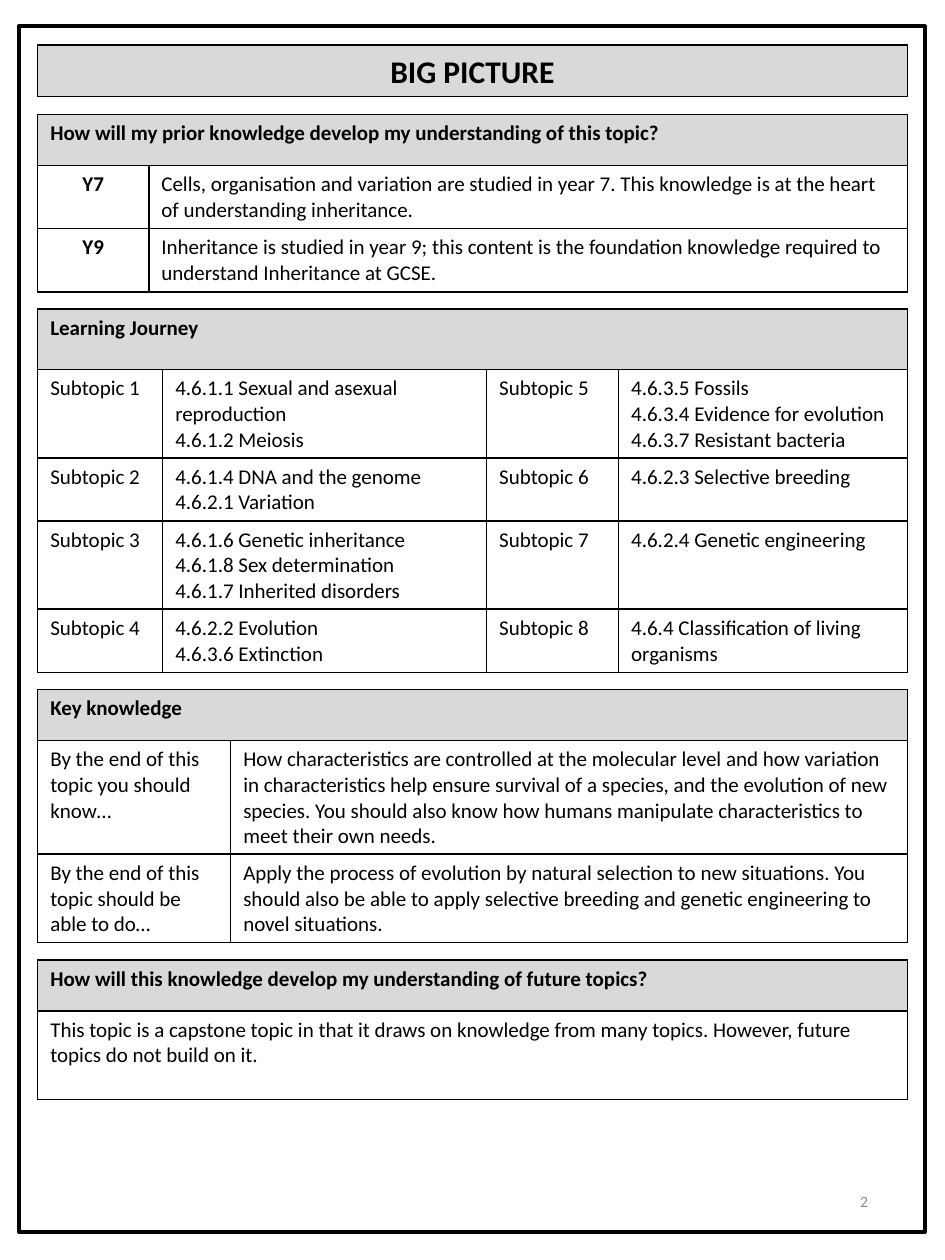
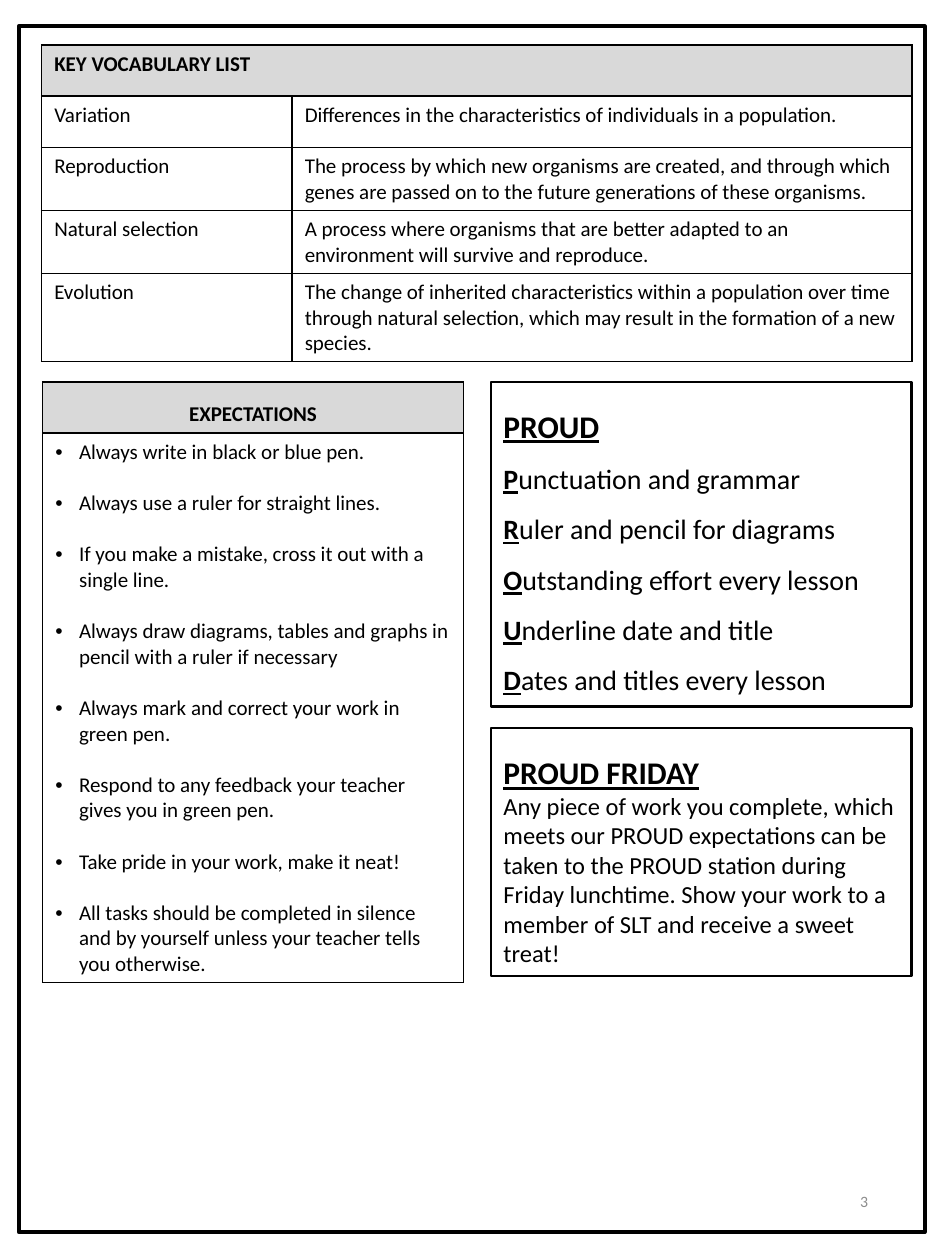
from dataclasses import dataclass

from lxml.etree import SubElement
from pptx import Presentation
from pptx.dml.color import RGBColor
from pptx.enum.shapes import MSO_SHAPE as Shape
from pptx.enum.text import MSO_ANCHOR as Anchor, MSO_AUTO_SIZE as AutoSize, PP_ALIGN as Align
from pptx.oxml.ns import qn
from pptx.util import Cm, Pt


@dataclass(frozen=True)
class Theme:
    font: str = "Calibri"
    ink: RGBColor = RGBColor(0x00, 0x00, 0x00)
    paper: RGBColor = RGBColor(0xFF, 0xFF, 0xFF)
    band: RGBColor = RGBColor(0xD9, 0xD9, 0xD9)
    muted: RGBColor = RGBColor(0x8C, 0x8C, 0x8C)
    heading: int = 18
    proud: int = 16
    friday: int = 14
    body: int = 12
    number: int = 9


theme = Theme()

# Table row heights in centimetres, by lines of text
HEADING, TWO, THREE, FOUR = 1.03, 1.27, 1.78, 2.29


def add_run(paragraph, text, size=theme.body, bold=False, underline=False, color=theme.ink):
    run = paragraph.add_run()
    run.text = text
    font = run.font
    font.name, font.size, font.bold, font.underline = theme.font, Pt(size), bold, underline
    font.color.rgb = color


def add_table(slide, left, top, widths, heights, rows, bold_labels=False):
    """Bordered table whose first row is a shaded heading across all columns."""
    frame = slide.shapes.add_table(len(rows), len(widths), Cm(left), Cm(top),
                                   Cm(sum(widths)), Cm(sum(heights)))
    table = frame.table
    table.first_row = table.horz_banding = False
    for column, width in zip(table.columns, widths):
        column.width = Cm(width)
    for row, height in zip(table.rows, heights):
        row.height = Cm(height)
    for cell in table.iter_cells():
        properties = cell._tc.get_or_add_tcPr()
        for side in ("a:lnL", "a:lnR", "a:lnT", "a:lnB"):
            border = SubElement(properties, qn(side), w=str(Pt(1)))
            fill = SubElement(border, qn("a:solidFill"))
            SubElement(fill, qn("a:srgbClr"), val=str(theme.ink))
        cell.fill.solid()
        cell.fill.fore_color.rgb = theme.paper
    if len(widths) > 1:
        table.cell(0, 0).merge(table.cell(0, len(widths) - 1))
    table.cell(0, 0).fill.fore_color.rgb = theme.band
    for row_index, row in enumerate(rows):
        for column_index, text in enumerate(row):
            text_frame = table.cell(row_index, column_index).text_frame
            label = bold_labels and row_index > 0 and column_index == 0
            for line_index, line in enumerate(text.split("\n")):
                paragraph = text_frame.add_paragraph() if line_index else text_frame.paragraphs[0]
                if label:
                    paragraph.alignment = Align.CENTER
                add_run(paragraph, line, bold=row_index == 0 or label)
    return table


presentation = Presentation()
presentation.slide_width, presentation.slide_height = Cm(19.05), Cm(25.4)
picture_slide = presentation.slides.add_slide(presentation.slide_layouts[5])
vocabulary_slide = presentation.slides.add_slide(presentation.slide_layouts[6])

# Page frame and page number on both slides
for number, slide in enumerate((picture_slide, vocabulary_slide), start=2):
    page_frame = slide.shapes.add_shape(Shape.RECTANGLE, Cm(0.38), Cm(0.53), Cm(18.26), Cm(24.31))
    page_frame.shadow.inherit = False
    page_frame.fill.background()
    page_frame.line.color.rgb = theme.ink
    page_frame.line.width = Pt(2.25)
    number_box = slide.shapes.add_textbox(Cm(13.46), Cm(23.55), Cm(4.29), Cm(1.35))
    number_box.text_frame.word_wrap = True
    number_box.text_frame.vertical_anchor = Anchor.MIDDLE
    paragraph = number_box.text_frame.paragraphs[0]
    paragraph.alignment = Align.RIGHT
    add_run(paragraph, str(number), theme.number, color=theme.muted)

# Slide title
title = picture_slide.shapes.title
title.left, title.top, title.width, title.height = Cm(0.76), Cm(0.91), Cm(17.53), Cm(1.03)
title.fill.solid()
title.fill.fore_color.rgb = theme.band
title.line.color.rgb = theme.ink
title.line.width = Pt(0.75)
title.text_frame.auto_size = AutoSize.NONE
title.text_frame.vertical_anchor = Anchor.MIDDLE
title.text_frame.paragraphs[0].alignment = Align.CENTER
add_run(title.text_frame.paragraphs[0], "BIG PICTURE", theme.heading, bold=True)

# Tables stacked under the title: widths, heights, rows, bold labels
sections = [
    ([2.24, 15.29], [HEADING, TWO, TWO], [
        ["How will my prior knowledge develop my understanding of this topic?"],
        ["Y7", "Cells, organisation and variation are studied in year 7. This knowledge is at "
               "the heart of understanding inheritance."],
        ["Y9", "Inheritance is studied in year 9; this content is the foundation knowledge "
               "required to understand Inheritance at GCSE."],
    ], True),
    ([2.52, 6.53, 2.66, 5.82], [1.22, THREE, TWO, THREE, TWO], [
        ["Learning Journey"],
        ["Subtopic 1", "4.6.1.1 Sexual and asexual reproduction\n4.6.1.2 Meiosis",
         "Subtopic 5",
         "4.6.3.5 Fossils\n4.6.3.4 Evidence for evolution\n4.6.3.7 Resistant bacteria"],
        ["Subtopic 2", "4.6.1.4 DNA and the genome\n4.6.2.1 Variation",
         "Subtopic 6", "4.6.2.3 Selective breeding"],
        ["Subtopic 3",
         "4.6.1.6 Genetic inheritance\n4.6.1.8 Sex determination\n4.6.1.7 Inherited disorders",
         "Subtopic 7", "4.6.2.4 Genetic engineering"],
        ["Subtopic 4", "4.6.2.2 Evolution\n4.6.3.6 Extinction",
         "Subtopic 8", "4.6.4 Classification of living organisms"],
    ], False),
    ([3.89, 13.64], [HEADING, FOUR, THREE], [
        ["Key knowledge"],
        ["By the end of this topic you should know…",
         "How characteristics are controlled at the molecular level and how variation in "
         "characteristics help ensure survival of a species, and the evolution of new species. "
         "You should also know how humans manipulate characteristics to meet their own needs."],
        ["By the end of this topic should be able to do…",
         "Apply the process of evolution by natural selection to new situations. You should also "
         "be able to apply selective breeding and genetic engineering to novel situations."],
    ], False),
    ([17.53], [HEADING, THREE], [
        ["How will this knowledge develop my understanding of future topics?"],
        ["This topic is a capstone topic in that it draws on knowledge from many topics. "
         "However, future topics do not build on it."],
    ], False),
]
top = 2.31
for widths, heights, rows, bold_labels in sections:
    add_table(picture_slide, 0.76, top, widths, heights, rows, bold_labels)
    top += sum(heights) + 0.35

# Vocabulary table
add_table(vocabulary_slide, 0.84, 0.91, [5.05, 12.49], [HEADING, HEADING, TWO, TWO, THREE], [
    ["KEY VOCABULARY LIST"],
    ["Variation", "Differences in the characteristics of individuals in a population."],
    ["Reproduction", "The process by which new organisms are created, and through which genes "
                     "are passed on to the future generations of these organisms."],
    ["Natural selection", "A process where organisms that are better adapted to an environment "
                          "will survive and reproduce."],
    ["Evolution", "The change of inherited characteristics within a population over time through "
                  "natural selection, which may result in the formation of a new species."],
])

# Expectations, as a bulleted list in a table
expectations = [
    "Always write in black or blue pen.",
    "Always use a ruler for straight lines.",
    "If you make a mistake, cross it out with a single line.",
    "Always draw diagrams, tables and graphs in pencil with a ruler if necessary",
    "Always mark and correct your work in green pen.",
    "Respond to any feedback your teacher gives you in green pen.",
    "Take pride in your work, make it neat!",
    "All tasks should be completed in silence and by yourself unless your teacher tells you "
    "otherwise.",
]
table = add_table(vocabulary_slide, 0.86, 7.7, [8.48], [HEADING, 11.08],
                  [["EXPECTATIONS"], ["\n".join(expectations)]])
heading = table.cell(0, 0).text_frame.paragraphs[0]
heading.alignment = Align.CENTER
heading.line_spacing = 1.5
for index, paragraph in enumerate(table.cell(1, 0).text_frame.paragraphs):
    if index:
        paragraph.space_before = Pt(14.65)
    properties = paragraph._p.get_or_add_pPr()
    properties.set("marL", str(Cm(0.48)))
    properties.set("indent", str(-Cm(0.48)))
    SubElement(properties, qn("a:buFont"), typeface="Arial")
    SubElement(properties, qn("a:buChar"), char="•")

# PROUD boxes: top, height, heading
proud_frames = []
for top, height, name in ((7.7, 6.55, "PROUD"), (14.68, 5.0, "PROUD FRIDAY")):
    box = vocabulary_slide.shapes.add_shape(Shape.RECTANGLE, Cm(9.9), Cm(top), Cm(8.48), Cm(height))
    box.shadow.inherit = False
    box.fill.background()
    box.line.color.rgb = theme.ink
    box.line.width = Pt(1.5)
    text_frame = box.text_frame
    text_frame.word_wrap = True
    text_frame.vertical_anchor = Anchor.TOP
    paragraph = text_frame.paragraphs[0]
    paragraph.alignment = Align.LEFT
    paragraph.line_spacing = 1.5
    add_run(paragraph, name, theme.heading, bold=True, underline=True)
    proud_frames.append(text_frame)
proud_frame, friday_frame = proud_frames

# One line for each letter of PROUD
for line in ("Punctuation and grammar", "Ruler and pencil for diagrams",
             "Outstanding effort every lesson", "Underline date and title",
             "Dates and titles every lesson"):
    paragraph = proud_frame.add_paragraph()
    paragraph.alignment = Align.LEFT
    paragraph.line_spacing = 1.5
    add_run(paragraph, line[0], theme.proud, bold=True, underline=True)
    add_run(paragraph, line[1:], theme.proud)

# Friday reward
paragraph = friday_frame.add_paragraph()
paragraph.alignment = Align.LEFT
add_run(paragraph, "Any piece of work you complete, which meets our PROUD expectations can be taken "
                   "to the PROUD station during Friday lunchtime. Show your work to a member of SLT "
                   "and receive a sweet treat!", theme.friday)

presentation.save("out.pptx")
